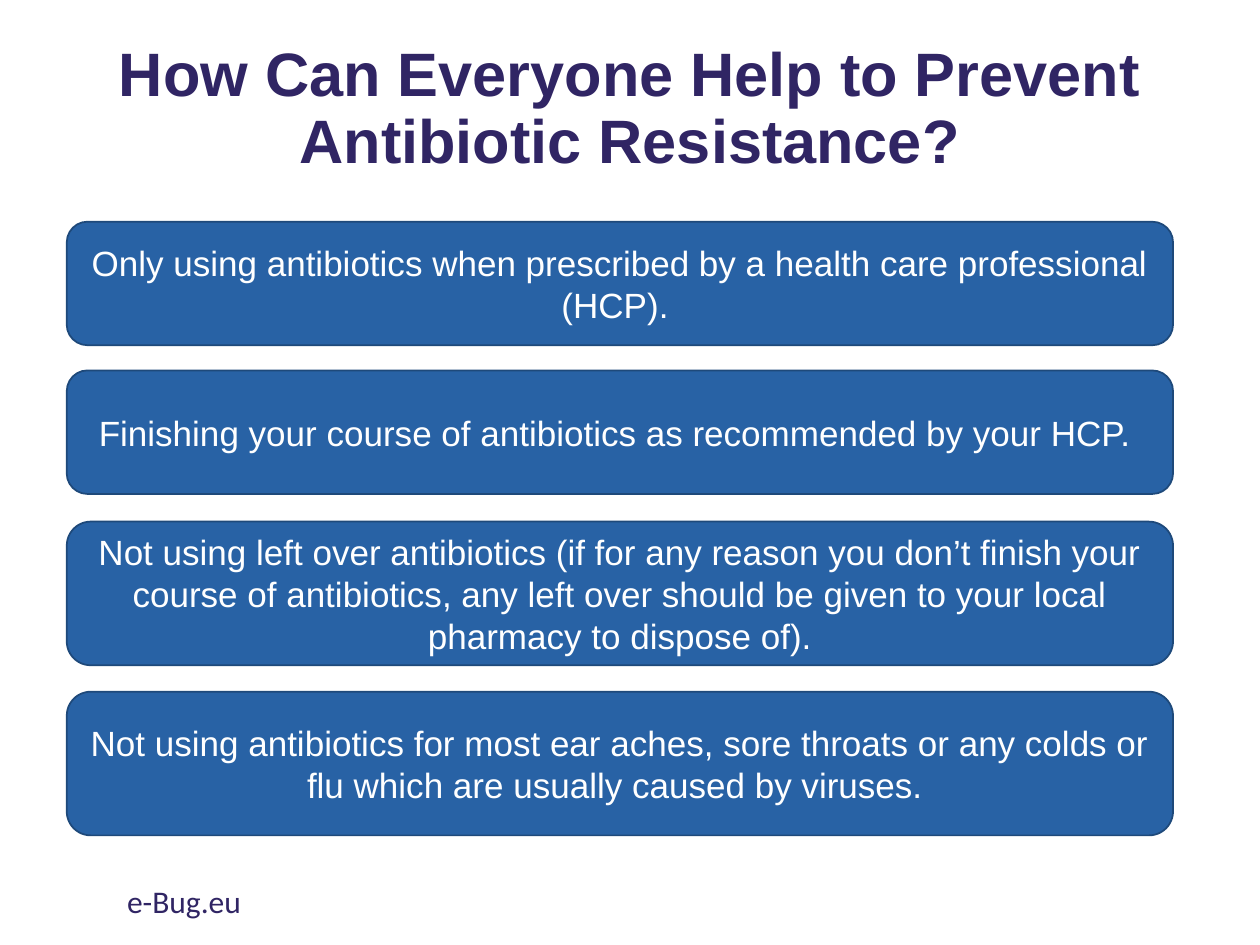
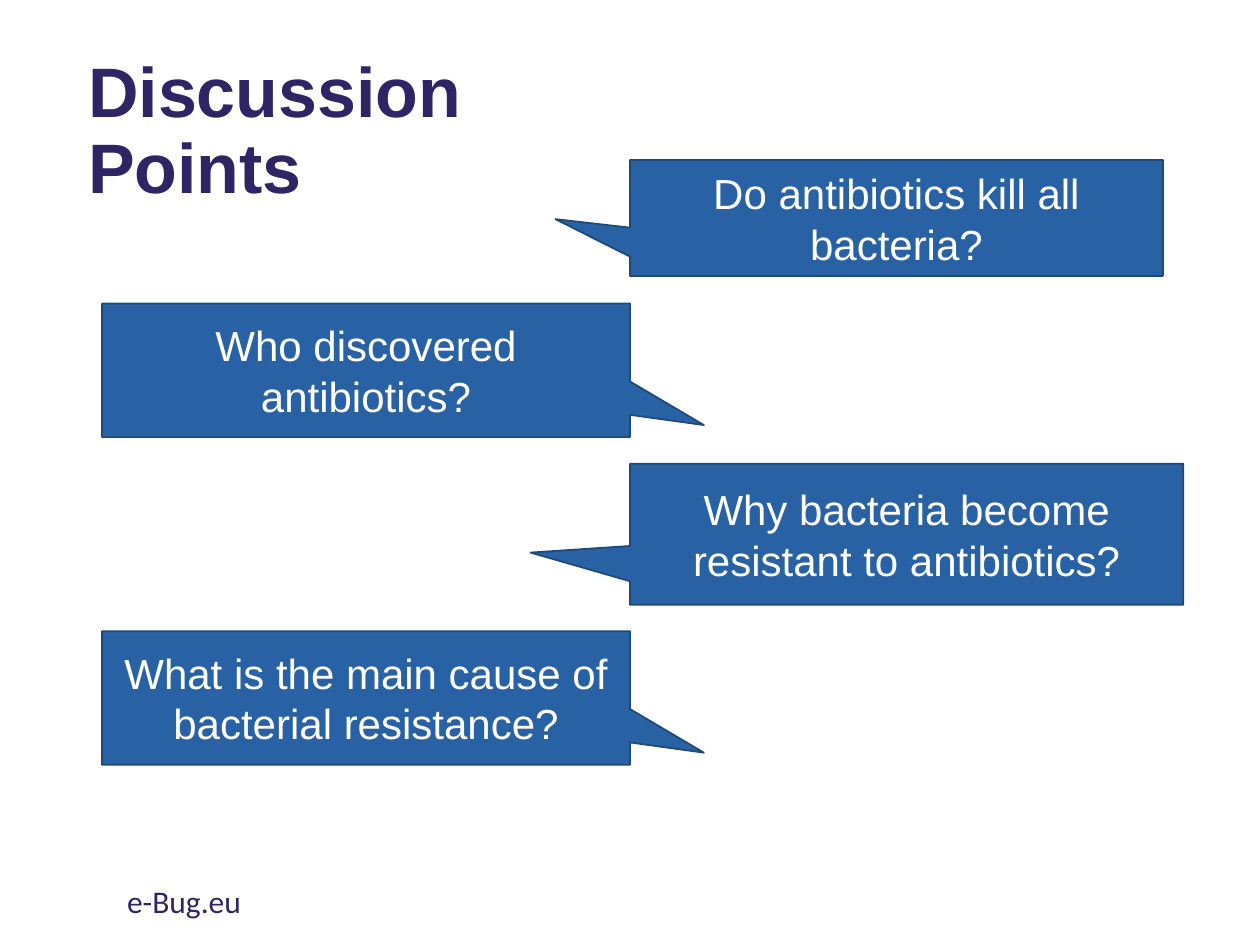
"""Build two slides on antibiotic resistance: prevention advice and discussion points."""
from pptx import Presentation
from pptx.dml.color import RGBColor
from pptx.enum.shapes import MSO_SHAPE as Shape
from pptx.enum.text import MSO_ANCHOR as Anchor, MSO_AUTO_SIZE as AutoSize, PP_ALIGN as Align
from pptx.util import Inches, Pt

PURPLE = RGBColor(0x30, 0x25, 0x64)
BLUE = RGBColor(0x28, 0x62, 0xA5)
DARK_BLUE = RGBColor(0x1E, 0x49, 0x7A)
WHITE = RGBColor(0xFF, 0xFF, 0xFF)


def write_text(shape, text, size, color=WHITE, font="Arial", bold=False,
               align=Align.CENTER, anchor=Anchor.MIDDLE, line_spacing=None):
    frame = shape.text_frame
    frame.word_wrap = True
    frame.auto_size = AutoSize.NONE
    frame.vertical_anchor = anchor
    frame.text = text
    paragraph = frame.paragraphs[0]
    paragraph.alignment = align
    paragraph.line_spacing = line_spacing
    paragraph.font.name = font
    paragraph.font.size = Pt(size)
    paragraph.font.bold = bold
    paragraph.font.color.rgb = color


def add_box(slide, kind, box, text, size):
    shape = slide.shapes.add_shape(kind, *map(Inches, box))
    shape.shadow.inherit = False
    shape.fill.solid()
    shape.fill.fore_color.rgb = BLUE
    shape.line.color.rgb = DARK_BLUE
    shape.line.width = Pt(1)
    write_text(shape, text, size)
    return shape


presentation = Presentation()
presentation.slide_width = Inches(10)
presentation.slide_height = Inches(7.5)

titles = [
    ("How Can Everyone Help to Prevent Antibiotic Resistance?",
     (0.69, 0.15, 8.62, 1.45), 35, Align.CENTER),
    ("Discussion Points", (0.6, 0.33, 3.68, 1.45), 40, Align.LEFT),
]
slides = []
for text, box, size, align in titles:
    slide = presentation.slides.add_slide(presentation.slide_layouts[5])
    title = slide.shapes.title
    title.left, title.top, title.width, title.height = map(Inches, box)
    write_text(title, text, size, color=PURPLE, bold=True, align=align, line_spacing=0.9)
    footer = slide.shapes.add_textbox(*map(Inches, (0.91, 6.95, 3.38, 0.4)))
    write_text(footer, "e-Bug.eu", 18, color=PURPLE, font="Calibri",
               align=Align.LEFT, anchor=Anchor.TOP)
    slides.append(slide)
advice_slide, discussion_slide = slides

advice = [
    (1.76, 0.98, "Only using antibiotics when prescribed by a health care professional (HCP). "),
    (2.94, 0.98, "Finishing your course of antibiotics as recommended by your HCP. "),
    (4.14, 1.14, "Not using left over antibiotics (if for any reason you don’t finish your course of "
                 "antibiotics, any left over should be given to your local pharmacy to dispose of)."),
    (5.49, 1.14, "Not using antibiotics for most ear aches, sore throats or any colds or flu "
                 "which are usually caused by viruses. "),
]
for top, height, text in advice:
    add_box(advice_slide, Shape.ROUNDED_RECTANGLE, (0.53, top, 8.78, height), text, 20)

questions = [
    ((5, 1.27, 4.23, 0.92), (-0.64, 0.01), "Do antibiotics kill all bacteria?"),
    ((0.81, 2.41, 4.19, 1.06), (0.64, 0.41), "Who discovered antibiotics?"),
    ((5, 3.68, 4.39, 1.12), (-0.68, 0.13), "Why bacteria become resistant to antibiotics?"),
    ((0.81, 5.01, 4.19, 1.06), (0.64, 0.41), "What is the main cause of bacterial resistance?"),
]
for box, pointer, text in questions:
    callout = add_box(discussion_slide, Shape.RECTANGULAR_CALLOUT, box, text, 24)
    callout.adjustments[0], callout.adjustments[1] = pointer

presentation.save("out.pptx")
